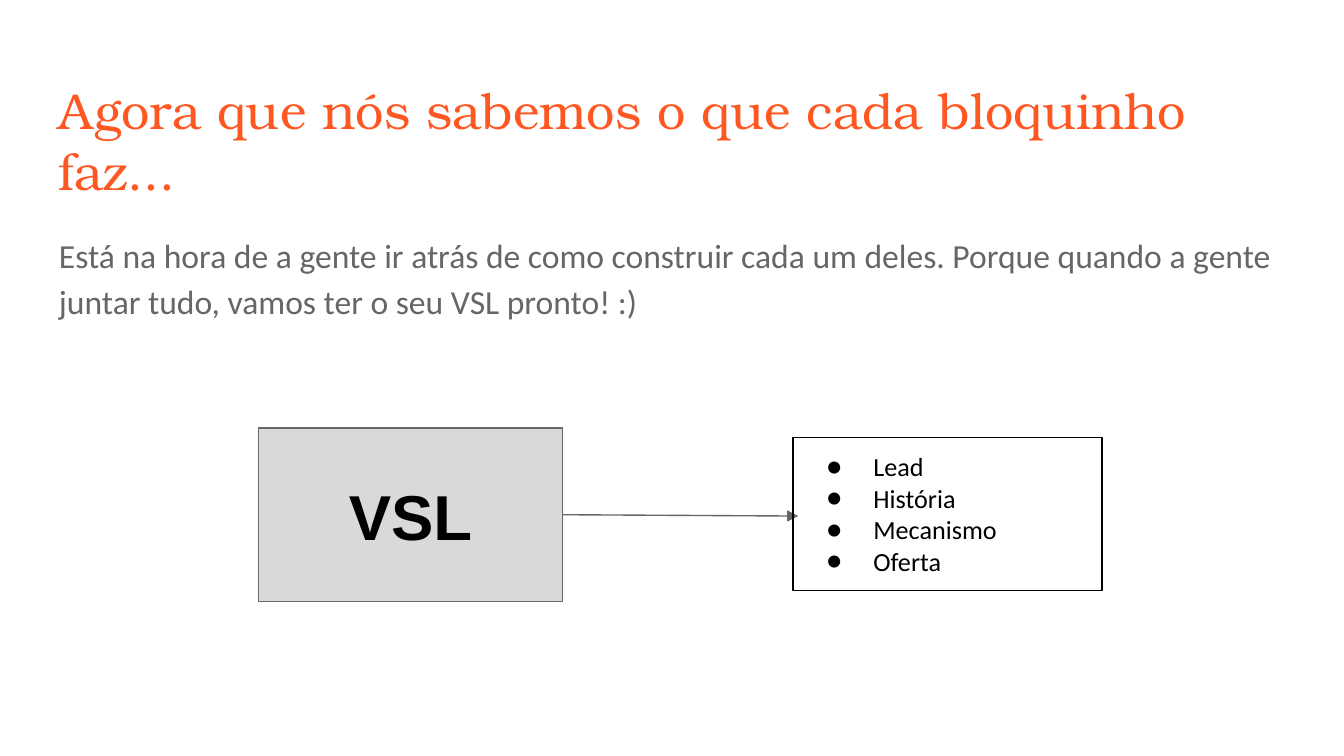
from dataclasses import dataclass

from lxml import etree
from pptx import Presentation, util as u
from pptx.dml.color import RGBColor
from pptx.enum import shapes, text
from pptx.oxml.ns import qn

# Content
TITLE = "Agora que nós sabemos o que cada bloquinho faz..."
BODY = ("Está na hora de a gente ir atrás de como construir cada um deles. "
        "Porque quando a gente juntar tudo, vamos ter o seu VSL pronto! :)")
PRODUCT = "VSL"
BLOCKS = ["Lead", "História", "Mecanismo", "Oferta"]

# Places in px (200 px to the inch): left, top, width, height
PX = 4572
SLIDE_SIZE = (2000, 1125)
TITLE_AREA = (68, 98, 1864, 126)
BODY_AREA = (68, 320, 1888, 748)
PRODUCT_AREA = (385, 637, 452, 258)
BLOCKS_AREA = (1180, 651, 460, 228)
ARROW = (838, 766, 1188, 768)  # from x, y to x, y
INSET = 20
BULLET_INDENT, BULLET_HANG = 100, 70


@dataclass(frozen=True)
class Theme:
    accent: str = "FF5722"
    grey: str = "666666"
    panel: str = "D9D9D9"
    ink: str = "000000"
    title_font: str = "TeX Gyre Bonum"
    body_font: str = "Calibri"
    product_font: str = "Arial"
    title_size: int = 27
    body_size: int = 18
    product_size: int = 34
    list_size: int = 14
    line_width: float = 0.75


THEME = Theme()


def emu(lengths):
    return [length * PX for length in lengths]


def set_line(line, color):
    line.color.rgb = RGBColor.from_string(color)
    line.width = u.Pt(THEME.line_width)


def write(shape, lines, font, size, color, bold=False, bulleted=False,
          anchor=text.MSO_ANCHOR.TOP, align=text.PP_ALIGN.LEFT):
    frame = shape.text_frame
    frame.word_wrap = True
    frame.vertical_anchor = anchor
    frame.margin_left = frame.margin_right = INSET * PX
    frame.margin_top = frame.margin_bottom = INSET * PX
    frame.text = "\n".join(lines)
    for paragraph in frame.paragraphs:
        paragraph.alignment = align
        if bulleted:
            add_bullet(paragraph, font, color)
        paragraph.font.name = font
        paragraph.font.size = u.Pt(size)
        paragraph.font.bold = bold
        paragraph.font.color.rgb = RGBColor.from_string(color)
    return frame


def add_bullet(paragraph, font, color):
    properties = paragraph._p.get_or_add_pPr()
    properties.set("marL", str(BULLET_INDENT * PX))
    properties.set("indent", str(-BULLET_HANG * PX))
    bullet_color = etree.SubElement(properties, qn("a:buClr"))
    etree.SubElement(bullet_color, qn("a:srgbClr"), val=color)
    etree.SubElement(properties, qn("a:buFont"), typeface=font)
    etree.SubElement(properties, qn("a:buChar"), char="●")


def add_box(slide, area, line_color, fill=None):
    box = slide.shapes.add_shape(shapes.MSO_SHAPE.RECTANGLE, *emu(area))
    box.shadow.inherit = False
    if fill:
        box.fill.solid()
        box.fill.fore_color.rgb = RGBColor.from_string(fill)
    else:
        box.fill.background()
    set_line(box.line, line_color)
    return box


def add_arrow(slide, ends, color):
    arrow = slide.shapes.add_connector(shapes.MSO_CONNECTOR.STRAIGHT, *emu(ends))
    set_line(arrow.line, color)
    etree.SubElement(arrow.line._get_or_add_ln(), qn("a:tailEnd"), type="triangle")
    etree.SubElement(arrow._element.spPr, qn("a:effectLst"))


def main():
    presentation = Presentation()
    presentation.slide_width, presentation.slide_height = emu(SLIDE_SIZE)
    slide = presentation.slides.add_slide(presentation.slide_layouts[6])

    # Title and body text
    title = slide.shapes.add_textbox(*emu(TITLE_AREA))
    write(title, [TITLE], THEME.title_font, THEME.title_size, THEME.accent)
    body = slide.shapes.add_textbox(*emu(BODY_AREA))
    frame = write(body, [BODY], THEME.body_font, THEME.body_size, THEME.grey)
    frame.paragraphs[0].line_spacing = 1.15
    frame.paragraphs[0].space_after = u.Pt(12)

    # Diagram: the product and the blocks it is made of
    add_arrow(slide, ARROW, THEME.grey)
    product = add_box(slide, PRODUCT_AREA, THEME.grey, THEME.panel)
    write(product, [PRODUCT], THEME.product_font, THEME.product_size, THEME.ink,
          bold=True, anchor=text.MSO_ANCHOR.MIDDLE, align=text.PP_ALIGN.CENTER)
    blocks = add_box(slide, BLOCKS_AREA, THEME.ink)
    write(blocks, BLOCKS, THEME.body_font, THEME.list_size, THEME.ink, bulleted=True)

    presentation.save("out.pptx")


if __name__ == "__main__":
    main()
